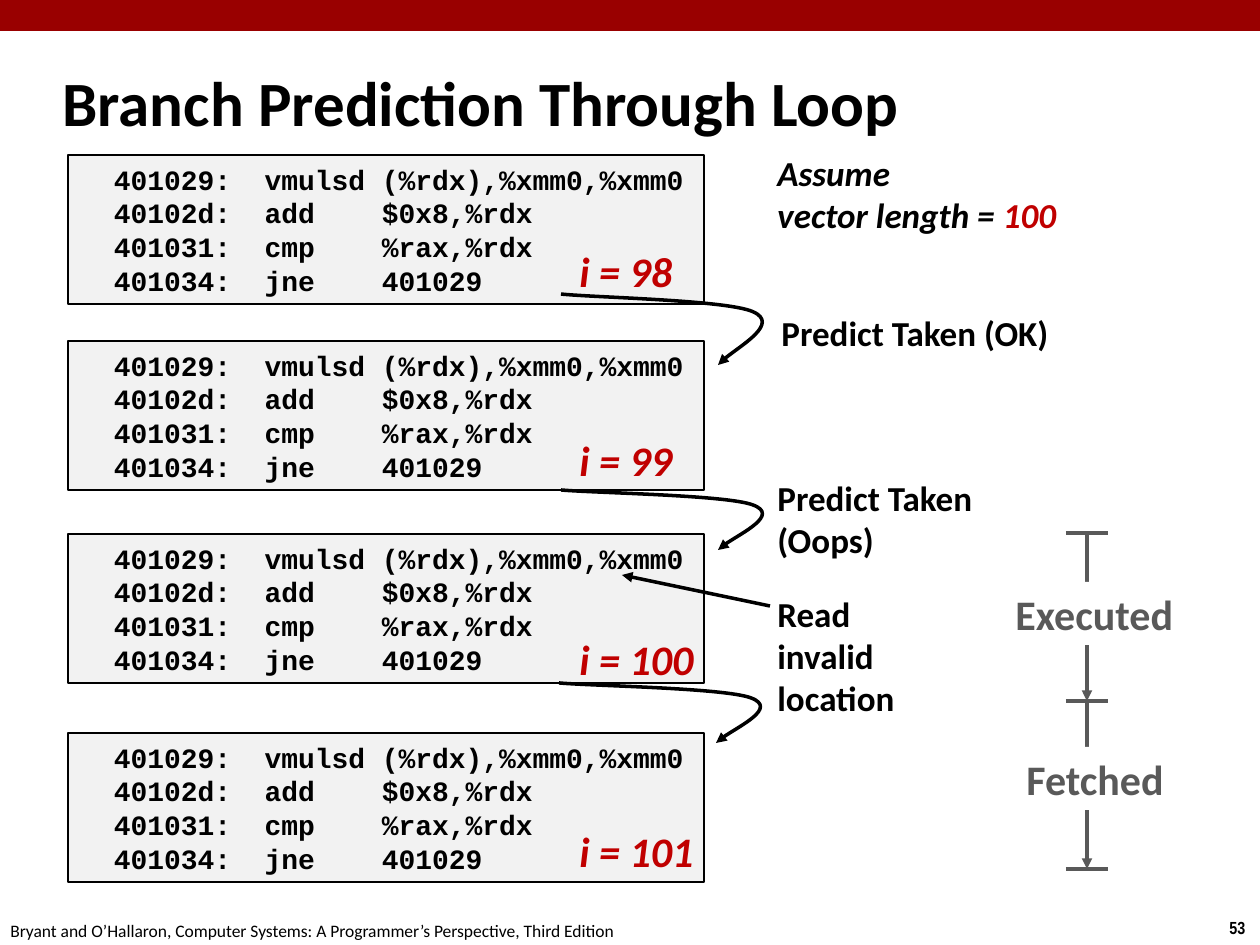
"""Build the slide on branch prediction through a loop."""
from pptx import Presentation
from pptx.dml.color import RGBColor
from pptx.enum.dml import MSO_LINE
from pptx.enum.shapes import MSO_CONNECTOR, MSO_SHAPE
from pptx.enum.text import MSO_ANCHOR, PP_ALIGN
from pptx.oxml.ns import qn
from pptx.util import Emu, Pt
from lxml import etree

RECT, STRAIGHT, SOLID = MSO_SHAPE.RECTANGLE, MSO_CONNECTOR.STRAIGHT, MSO_LINE.SOLID
LEFT, TOP, MIDDLE = PP_ALIGN.LEFT, MSO_ANCHOR.TOP, MSO_ANCHOR.MIDDLE
BLACK = RGBColor(0, 0, 0)
WHITE = RGBColor(255, 255, 255)
BAND = RGBColor(0x99, 0, 0)
RED = RGBColor(0xC0, 0, 0)
GRAY = RGBColor(0x59, 0x59, 0x59)
PALE = RGBColor(0xF2, 0xF2, 0xF2)
SCALE = 914400 / 126

TITLE = {"name": "Calibri", "size": Pt(36), "bold": True}
CODE = {"name": "Courier New", "size": Pt(16), "bold": True}
NOTE = {"name": "Calibri", "size": Pt(20), "bold": True}
LEAN = {**NOTE, "italic": True}
STAGE = {**NOTE, "size": Pt(24)}
COUNT = {**STAGE, "italic": True}
FOOT = {"name": "Calibri", "size": Pt(10)}
PAGE = {"name": "Arial Narrow", "size": Pt(10), "bold": True}

LINES = [
    "  401029:  vmulsd (%rdx),%xmm0,%xmm0",
    "  40102d:  add    $0x8,%rdx",
    "  401031:  cmp    %rax,%rdx",
    "  401034:  jne    401029",
]
STEPS = [(155, "i = 98", 239, 118), (341, "i = 99", 428, 118),
         (534, "i = 100", 627, 140), (733, "i = 101", 819, 140)]
CURVES = [(561, 294, 71), (561, 490, 60), (559, 683, 60)]
BEND = [(0, 0), (33, 3), (166, 5), (192, 15), (219, 25), (165, 51), (157, 60)]
NOTES = [
    (769, 305, 295, 55, ["Predict Taken (OK)"]),
    (765, 470, 222, 97, ["Predict Taken", "(Oops)"]),
]
TICKS = [533, 701, 869]
STAGES = [(1003, 582, 185, "Executed"), (1014, 747, 164, "Fetched")]


def px(*nums):
    """Turn pixels into EMU."""
    return [Emu(round(n * SCALE)) for n in nums]


def style(font, form, color):
    """Apply format values to a font."""
    for key, val in form.items():
        setattr(font, key, val)
    font.color.rgb = color


def write(shape, rows, form, color=BLACK, wrap=False, anchor=TOP):
    """Put one left-aligned paragraph per row into a shape."""
    frame = shape.text_frame
    frame.text = "\n".join(rows)
    frame.word_wrap, frame.vertical_anchor = wrap, anchor
    for para in frame.paragraphs:
        para.alignment = LEFT
        for run in para.runs:
            style(run.font, form, color)
    return frame


def label(slide, spot, rows, form, color=BLACK, wrap=False):
    """Add a text box."""
    return write(slide.shapes.add_textbox(*px(*spot)), rows, form, color, wrap)


def block(slide, spot, fill, edge=None):
    """Add a filled rectangle."""
    shape = slide.shapes.add_shape(RECT, *px(*spot))
    shape.shadow.inherit = False
    shape.fill.solid()
    shape.fill.fore_color.rgb = fill
    if edge is None:
        shape.line.fill.background()
    else:
        shape.line.color.rgb, shape.line.width = edge, Pt(0.75)
    return shape


def stroke(shape, color, head):
    """Format a line and give it an arrowhead if asked."""
    line = shape.line
    line.color.rgb, line.width, line.dash_style = color, Pt(2), SOLID
    if head:
        etree.SubElement(line._get_or_add_ln(), qn("a:tailEnd"), type="triangle")


def link(slide, ends, color, head=False):
    """Add a straight line."""
    line = slide.shapes.add_connector(STRAIGHT, *px(*ends))
    stroke(line, color, head)
    etree.SubElement(line._element.spPr, qn("a:effectLst"))


def curve(slide, left, top, high):
    """Add a curved arrow made of two cubic pieces."""
    dots = [px(left + x, top + y * high / 60) for x, y in BEND]
    build = slide.shapes.build_freeform(*dots[0])
    build.add_line_segments(dots[1:], close=False)
    shape = build.convert_to_shape()
    shape.shadow.inherit = False
    shape.fill.background()
    legs = shape._element.xpath(".//a:lnTo")
    for i in range(0, len(legs), 3):
        bend = etree.Element(qn("a:cubicBezTo"))
        legs[i].addprevious(bend)
        for leg in legs[i:i + 3]:
            bend.append(leg[0])
            leg.getparent().remove(leg)
    stroke(shape, BLACK, True)


def code(slide, top):
    """Add one framed pass of the loop."""
    shape = block(slide, (68, top, 636, 149), PALE, BLACK)
    for para in write(shape, LINES, CODE, anchor=MIDDLE).paragraphs:
        para.line_spacing = Pt(19.2)


def head(slide):
    """Place the title, the band and the footer."""
    block(slide, (0, 0, 1260, 31), BAND)
    title = slide.shapes.title
    title.left, title.top, title.width, title.height = px(50, 62, 1082, 79)
    write(title, ["Branch Prediction Through Loop"], TITLE, wrap=True, anchor=MIDDLE)
    label(slide, (1217, 911, 43, 34), ["53"], PAGE)
    label(slide, (-2, 914, 640, 34), [
        "Bryant and O’Hallaron, Computer Systems: "
        "A Programmer’s Perspective, Third Edition"], FOOT)


def span(slide):
    """Add the bracket of executed and fetched steps."""
    for start, end in zip(TICKS, TICKS[1:]):
        link(slide, (1087, start, 1087, end), GRAY, True)
    for left, top, wide, word in STAGES:
        write(block(slide, (left, top, wide, 63), WHITE), [word], STAGE, GRAY)
    for y in TICKS:
        link(slide, (1066, y, 1108, y), GRAY)


def main():
    """Build and save the slide."""
    deck = Presentation()
    deck.slide_width, deck.slide_height = px(1260, 945)
    slide = deck.slides.add_slide(deck.slide_layouts[5])
    head(slide)
    for top, text, y, wide in STEPS:
        code(slide, top)
        label(slide, (567, y, wide, 63), [text], COUNT, RED)
    for spot in CURVES:
        curve(slide, *spot)
    for *spot, rows in NOTES:
        label(slide, spot, rows, NOTE)
    label(slide, (765, 586, 179, 140), ["Read invalid location"], NOTE, wrap=True)
    frame = label(slide, (765, 145, 306, 97), ["Assume", "vector length = "], LEAN)
    run = frame.paragraphs[1].add_run()
    run.text = "100"
    style(run.font, LEAN, RED)
    link(slide, (770, 606, 622, 575), BLACK, True)
    span(slide)
    deck.save("out.pptx")


if __name__ == "__main__":
    main()
